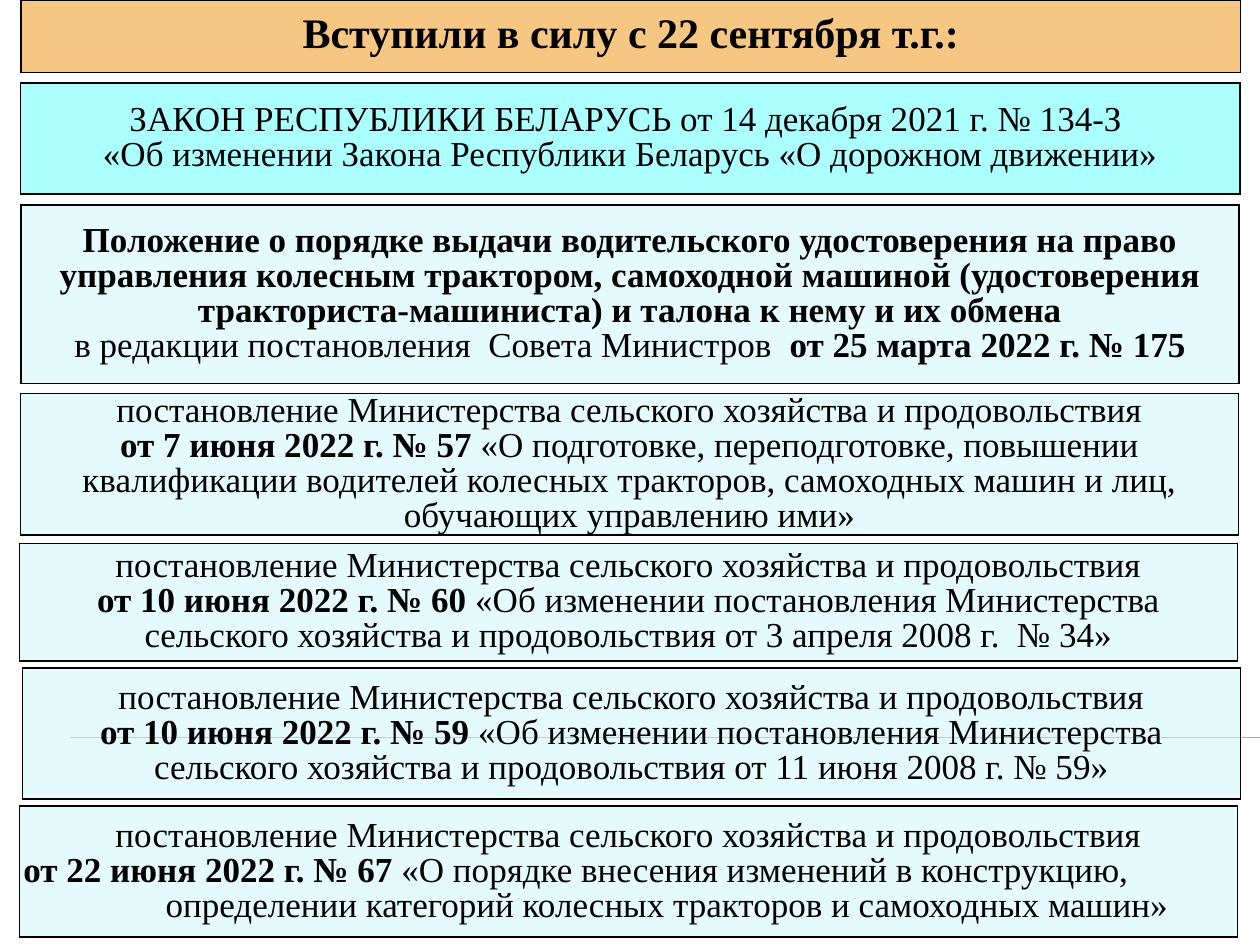
from lxml import etree
from pptx import Presentation, util as u
from pptx.dml.color import RGBColor
from pptx.enum import shapes, text
from pptx.oxml.ns import qn

COLORS = {"ink": "000000", "heading": "F6C782", "law": "00FFFF", "act": "C9F6F7", "rule": "F0A22E"}
MINISTRY = "постановление Министерства сельского хозяйства и продовольствия"
CENTER, LEFT = text.PP_ALIGN.CENTER, text.PP_ALIGN.LEFT


def write(paragraph, content, size=20, bold=False, font="Times New Roman", color="ink"):
    run = paragraph.add_run()
    run.text = content
    run.font.size, run.font.bold, run.font.name = u.Pt(size), bold, font
    run.font.color.rgb = RGBColor.from_string(COLORS[color])


class ActsSlide:
    size = 20
    inset = u.Cm(0.03)
    border = u.Pt(1)

    def __init__(self, deck):
        self.slide = deck.slides.add_slide(deck.slide_layouts[6])

    def paragraph(self, paragraph, runs, size=size, align=CENTER, indent=0):
        paragraph.alignment = align
        paragraph.line_spacing = u.Pt(size)
        paragraph.space_before = paragraph.space_after = u.Pt(0)
        if indent:
            paragraph._p.get_or_add_pPr().set("marL", str(u.Cm(indent)))
        for content, bold in runs:
            write(paragraph, content, size=size, bold=bold)

    def rule(self, left, right, top):
        line = self.slide.shapes.add_connector(
            shapes.MSO_CONNECTOR.STRAIGHT, u.Cm(left), u.Cm(top), u.Cm(right), u.Cm(top))
        line.line.color.rgb = RGBColor.from_string(COLORS["rule"])
        line.line.width = u.Pt(0.75)
        etree.SubElement(line._element.spPr, qn("a:effectLst"))

    def act(self, paragraphs, left, top, width, height, color="act", opacity=49):
        table = self.slide.shapes.add_table(1, 1, *map(u.Cm, (left, top, width, height))).table
        table.first_row = table.horz_banding = False
        cell = table.cell(0, 0)
        cell.margin_left = cell.margin_right = cell.margin_top = self.inset
        cell.margin_bottom = 0
        cell.vertical_anchor = text.MSO_ANCHOR.MIDDLE
        properties = cell._tc.get_or_add_tcPr()
        for side in ("a:lnL", "a:lnR", "a:lnT", "a:lnB"):
            edge = etree.SubElement(properties, qn(side), w=str(self.border))
            ink = etree.SubElement(edge, qn("a:solidFill"))
            etree.SubElement(ink, qn("a:srgbClr"), val=COLORS["ink"])
        cell.fill.solid()
        cell.fill.fore_color.rgb = RGBColor.from_string(COLORS[color])
        if opacity < 100:
            tint = properties.find(qn("a:solidFill"))[0]
            etree.SubElement(tint, qn("a:alpha"), val=str(opacity * 1000))
        for number, (runs, layout) in enumerate(paragraphs):
            target = cell.text_frame.add_paragraph() if number else cell.text_frame.paragraphs[0]
            self.paragraph(target, runs, **layout)


def ministry_act(date, subject):
    return [([(MINISTRY, False)], {}), ([(date + " ", True), (subject, False)], {})]


def main():
    deck = Presentation()
    deck.slide_width, deck.slide_height = u.Cm(25.4), u.Cm(19.05)
    page = ActsSlide(deck)
    page.rule(1.42, 25.4, 14.87)

    heading = [([("Вступили в силу с 22 сентября т.г.:", True)], {"size": 24})]
    page.act(heading, 0.42, 0, 24.59, 1.46, color="heading", opacity=100)

    law = [
        ([("ЗАКОН РЕСПУБЛИКИ БЕЛАРУСЬ от 14 декабря 2021 г. № 134-З ", False)], {}),
        ([("«Об изменении Закона Республики Беларусь «О дорожном движении»", False)], {}),
    ]
    page.act(law, 0.41, 1.67, 24.59, 2.24, color="law", opacity=33)

    regulation = [
        ([("Положение о порядке выдачи водительского удостоверения на право управления колесным "
           "трактором, самоходной машиной (удостоверения тракториста-машиниста) и талона к нему "
           "и их обмена", True)], {}),
        ([("в редакции постановления  Совета Министров  ", False),
          ("от 25 марта 2022 г. № 175", True)], {}),
    ]
    training = ministry_act(
        "от 7 июня 2022 г. № 57",
        "«О подготовке, переподготовке, повышении квалификации водителей колесных тракторов, "
        "самоходных машин и лиц, обучающих управлению ими»")
    amendment_34 = ministry_act(
        "от 10 июня 2022 г. № 60",
        "«Об изменении постановления Министерства сельского хозяйства и продовольствия "
        "от 3 апреля 2008 г.  № 34»")
    amendment_59 = ministry_act(
        "от 10 июня 2022 г. № 59",
        "«Об изменении постановления Министерства сельского хозяйства и продовольствия "
        "от 11 июня 2008 г. № 59»")
    construction = [
        ([(MINISTRY, False)], {}),
        ([("от 22 июня 2022 г. № 67 ", True),
          ("«О порядке внесения изменений в конструкцию,", False)],
         {"align": LEFT, "indent": 0.05}),
        ([("определении категорий колесных тракторов и самоходных машин»", False)],
         {"indent": 1.55}),
    ]
    for paragraphs, left, top, height in (
        (regulation, 0.42, 4.13, 3.6),
        (training, 0.41, 7.93, 2.84),
        (amendment_34, 0.39, 10.96, 2.36),
        (amendment_59, 0.45, 13.47, 2.64),
        (construction, 0.39, 16.25, 2.64),
    ):
        page.act(paragraphs, left, top, 24.56, height)

    deck.save("out.pptx")


if __name__ == "__main__":
    main()
